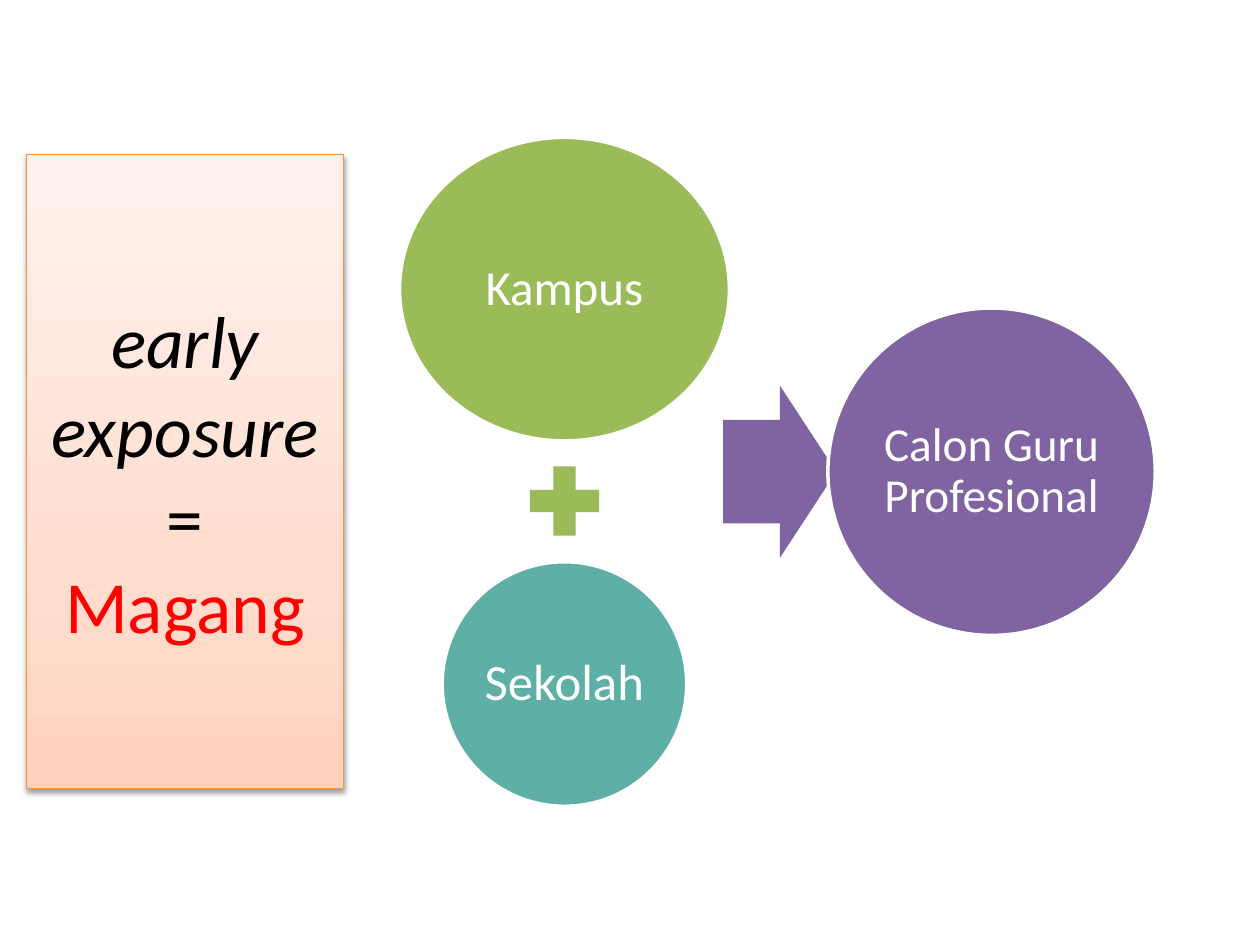
"""Build the slide on early exposure through internship."""
from copy import deepcopy
from lxml import etree
from pptx import Presentation, util as u
from pptx.dml.color import RGBColor
from pptx.enum import shapes, text
from pptx.oxml.ns import qn

BLACK = RGBColor(0, 0, 0)
WHITE = RGBColor(255, 255, 255)
RED = RGBColor(255, 0, 0)
GREEN = RGBColor(0x9B, 0xBB, 0x59)
TEAL = RGBColor(0x5E, 0xAF, 0xA6)
PURPLE = RGBColor(0x80, 0x64, 0xA2)
ORANGE = RGBColor(0xF6, 0x92, 0x40)
PEACH = [
    (0, RGBColor(0xFF, 0xD2, 0xBD)),
    (0.35, RGBColor(0xFF, 0xDE, 0xD0)),
    (1, RGBColor(0xFF, 0xF2, 0xED)),
]

FONT = "Calibri"
KIND = shapes.MSO_SHAPE
MID = 11.38
TITLE = [("early exposure ", BLACK, True), ("= ", BLACK, False), ("Magang", RED, False)]
SIGNS = [
    (KIND.MATH_PLUS, MID, 10.1, 1.9, 1.9, GREEN),
    (KIND.RIGHT_ARROW, 15.72, 9.51, 2.28, 3.48, PURPLE),
]
DISCS = [
    ("Kampus", 28, MID, 5.83, 6.65, 6.12, GREEN),
    ("Sekolah", 29, MID, 13.79, 4.93, 4.93, TEAL),
    ("Calon Guru Profesional", 27, 19.99, 9.51, 6.6, 6.6, PURPLE),
]


def add(slide, kind, x, y, wide, high):
    """Add a shape centred on x, y without a shadow."""
    shape = slide.shapes.add_shape(
        kind, u.Cm(x - wide / 2), u.Cm(y - high / 2), u.Cm(wide), u.Cm(high))
    shape.shadow.inherit = False
    return shape


def paint(shape, color):
    """Fill a shape with one colour and drop its line."""
    shape.fill.solid()
    shape.fill.fore_color.rgb = color
    shape.line.fill.background()


def edge(shape, color, width):
    """Draw the outline of a shape."""
    shape.line.color.rgb = color
    shape.line.width = u.Pt(width)


def write(shape, runs, size, pad, space):
    """Write centred runs of text, colour and slant into a shape."""
    frame = shape.text_frame
    frame.word_wrap = True
    frame.vertical_anchor = text.MSO_ANCHOR.MIDDLE
    frame.margin_left = frame.margin_right = u.Cm(pad)
    frame.margin_top = frame.margin_bottom = u.Cm(0.1)
    para = frame.paragraphs[0]
    para.alignment = text.PP_ALIGN.CENTER
    para.line_spacing = space
    for words, color, slant in runs:
        run = para.add_run()
        run.text = words
        run.font.name = FONT
        run.font.size = u.Pt(size)
        run.font.italic = slant
        run.font.color.rgb = color


def shade(shape, stops):
    """Fill a shape with a gradient that rises from the bottom."""
    shape.fill.gradient()
    shape.fill.gradient_angle = 90
    group = shape._element.spPr.find(".//" + qn("a:gsLst"))
    while len(group) < len(stops):
        group.append(deepcopy(group[-1]))
    for stop, (place, color) in zip(shape.fill.gradient_stops, stops):
        stop.position = place
        stop.color.rgb = color


def drop(shape):
    """Cast a soft shadow straight down."""
    effects = shape._element.spPr.find(qn("a:effectLst"))
    shadow = etree.SubElement(
        effects, qn("a:outerShdw"), blurRad=str(u.Pt(3.1)), dist=str(u.Pt(1.6)),
        dir="5400000", rotWithShape="0")
    color = etree.SubElement(shadow, qn("a:srgbClr"), val=str(BLACK))
    etree.SubElement(color, qn("a:alpha"), val="38000")


def main():
    """Place the panel, the signs and the discs."""
    deck = Presentation()
    deck.slide_width, deck.slide_height = u.Cm(25.4), u.Cm(19.05)
    slide = deck.slides.add_slide(deck.slide_layouts[6])

    panel = add(slide, KIND.RECTANGLE, 3.73, 9.51, 6.4, 12.78)
    shade(panel, PEACH)
    edge(panel, ORANGE, 0.75)
    drop(panel)
    write(panel, TITLE, 42, 0.3, 1)

    for kind, x, y, wide, high, color in SIGNS:
        sign = add(slide, kind, x, y, wide, high)
        paint(sign, color)
        if kind == KIND.RIGHT_ARROW:
            sign.adjustments[0] = 0.6

    for words, size, x, y, wide, high, color in DISCS:
        disc = add(slide, KIND.OVAL, x, y, wide, high)
        paint(disc, color)
        edge(disc, WHITE, 2)
        write(disc, [(words, WHITE, False)], size, 0.1, 0.9)

    deck.save("out.pptx")


if __name__ == "__main__":
    main()
